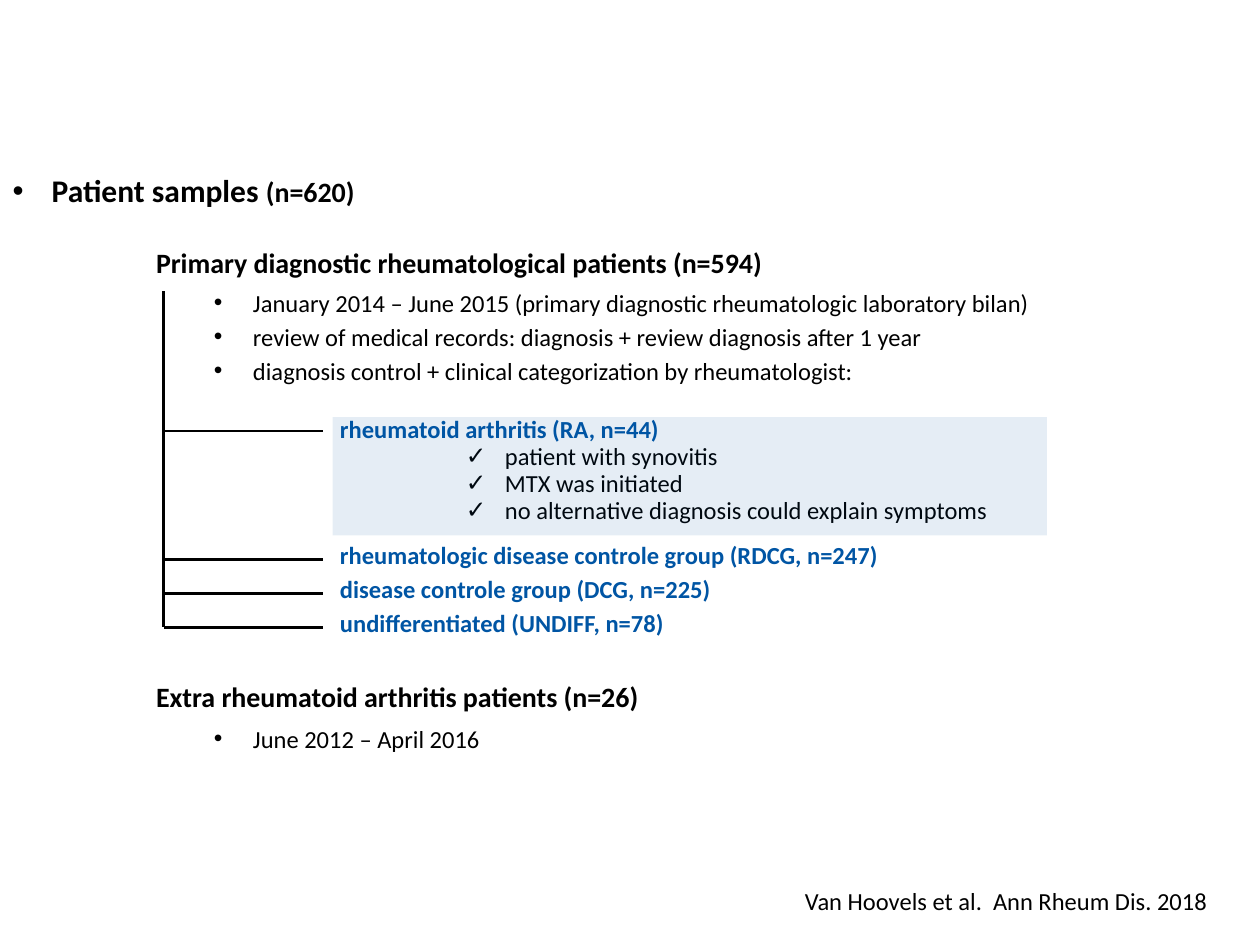
from lxml.etree import SubElement
from pptx import Presentation
from pptx.dml.color import RGBColor
from pptx.enum.shapes import MSO_CONNECTOR, MSO_SHAPE
from pptx.enum.text import MSO_ANCHOR, MSO_AUTO_SIZE, PP_ALIGN
from pptx.oxml.ns import qn
from pptx.util import Inches, Pt

HUES = {name: RGBColor.from_string(code) for name, code in
        {"ink": "000000", "blue": "0055A4"}.items()}

deck = Presentation()
deck.slide_width, deck.slide_height = Inches(10), Inches(7.5)
slide = deck.slides.add_slide(deck.slide_layouts.get_by_name("Title Only"))
shapes = slide.shapes


def grid(*marks):
    """Turn x, y pairs in percent of the slide into lengths."""
    sides = (deck.slide_width, deck.slide_height)
    return [int(sides[i % 2] * mark / 100) for i, mark in enumerate(marks)]


def write(box, rows, size, wrap=False):
    """Fill a box with rows of (text, kind, space before)."""
    frame = box.text_frame
    frame.text = "\n".join(row[0] for row in rows)
    frame.word_wrap = wrap
    frame.auto_size = MSO_AUTO_SIZE.NONE
    frame.vertical_anchor = MSO_ANCHOR.TOP
    for para, (_, kind, gap) in zip(frame.paragraphs, rows):
        level, left, hang, mark, tight, bold, hue = KINDS[kind]
        para.level = level
        para.alignment = PP_ALIGN.LEFT
        para.line_spacing = tight
        para.space_before = Pt(gap)
        props = para._p.get_or_add_pPr()
        props.set("marL", str(Inches(left)))
        props.set("indent", str(-Inches(hang)))
        if mark:
            SubElement(props, qn("a:buFont"), typeface="Arial")
            SubElement(props, qn("a:buChar"), char=mark)
        for run in para.runs:
            run.font.name = "Calibri"
            run.font.size = Pt(size)
            run.font.bold = bold
            run.font.color.rgb = HUES[hue]


# level, left indent, hanging indent, bullet, line spacing, bold, colour
KINDS = {
    "title": (0, 0.31, 0.31, "•", 1.0, True, "ink"),
    "head": (0, 0, 0, None, 1.0, True, "ink"),
    "plain": (0, 0, 0, None, 1.0, False, "ink"),
    "point": (1, 0.81, 0.31, "•", 0.8, False, "ink"),
    "group": (3, 1.5, 0, None, 0.8, True, "blue"),
    "check": (5, 2.81, 0.31, "✓", 0.8, False, "ink"),
}

# Title
title = shapes.title
title.left, title.top, title.width, title.height = grid(0, 17.47, 42.6, 6.67)
write(title, [("Patient samples ", "title", 6)], 18)
count = title.text_frame.paragraphs[0].add_run()
count.text = "(n=620)"
count.font.name = "Calibri"
count.font.size = Pt(16)
count.font.bold = True
count.font.color.rgb = HUES["ink"]

# Patients and their groups
body = [
    ("January 2014 – June 2015 (primary diagnostic rheumatologic laboratory bilan)", "point", 2),
    ("review of medical records: diagnosis + review diagnosis after 1 year", "point", 6),
    ("diagnosis control + clinical categorization by rheumatologist:", "point", 6),
    ("rheumatoid arthritis (RA, n=44)", "group", 20),
    ("patient with synovitis", "check", 2),
    ("MTX was initiated", "check", 2),
    ("no alternative diagnosis could explain symptoms", "check", 2),
    ("rheumatologic disease controle group (RDCG, n=247)", "group", 12),
    ("disease controle group (DCG, n=225)", "group", 6),
    ("undifferentiated (UNDIFF, n=78)", "group", 6),
]
write(shapes.add_textbox(*grid(11, 30.4, 88, 41.07)), body, 14, True)

# Tint over the arthritis group
band = shapes.add_shape(MSO_SHAPE.RECTANGLE, *grid(26.4, 44.13, 56.7, 12.53))
band.shadow.inherit = False
band.line.fill.background()
band.fill.solid()
band.fill.fore_color.rgb = HUES["blue"]
tint = band.fill._xPr.find(qn("a:solidFill"))[0]
SubElement(tint, qn("a:alpha"), val="10000")

# Headings, dates and citation
for spot, text, kind, gap, size in [
    ((11.4, 25.33, 62.3, 4.93), "Primary diagnostic rheumatological patients (n=594)", "head", 0, 16),
    ((11.4, 71.2, 50.2, 4.93), "Extra rheumatoid arthritis patients (n=26)", "head", 0, 16),
    ((11, 76.53, 88, 4), "June 2012 – April 2016", "point", 2, 14),
    ((62.9, 93.07, 34.2, 4.53), "Van Hoovels et al.  Ann Rheum Dis. 2018", "plain", 0, 14),
]:
    write(shapes.add_textbox(*grid(*spot)), [(text, kind, gap)], size)

# Tree: one trunk, one branch per group
trunk, tip, foot = 13, 25.6, 66.4
ends = [(trunk, 30.8, trunk, foot)]
ends += [(trunk, y, tip, y) for y in (45.6, foot - 7.2, foot - 3.6, foot)]
for end in ends:
    line = shapes.add_connector(MSO_CONNECTOR.STRAIGHT, *grid(*end))
    line.line.color.rgb = HUES["ink"]
    line.line.width = Pt(1.5)
    SubElement(line._element.spPr, qn("a:effectLst"))

deck.save("out.pptx")
